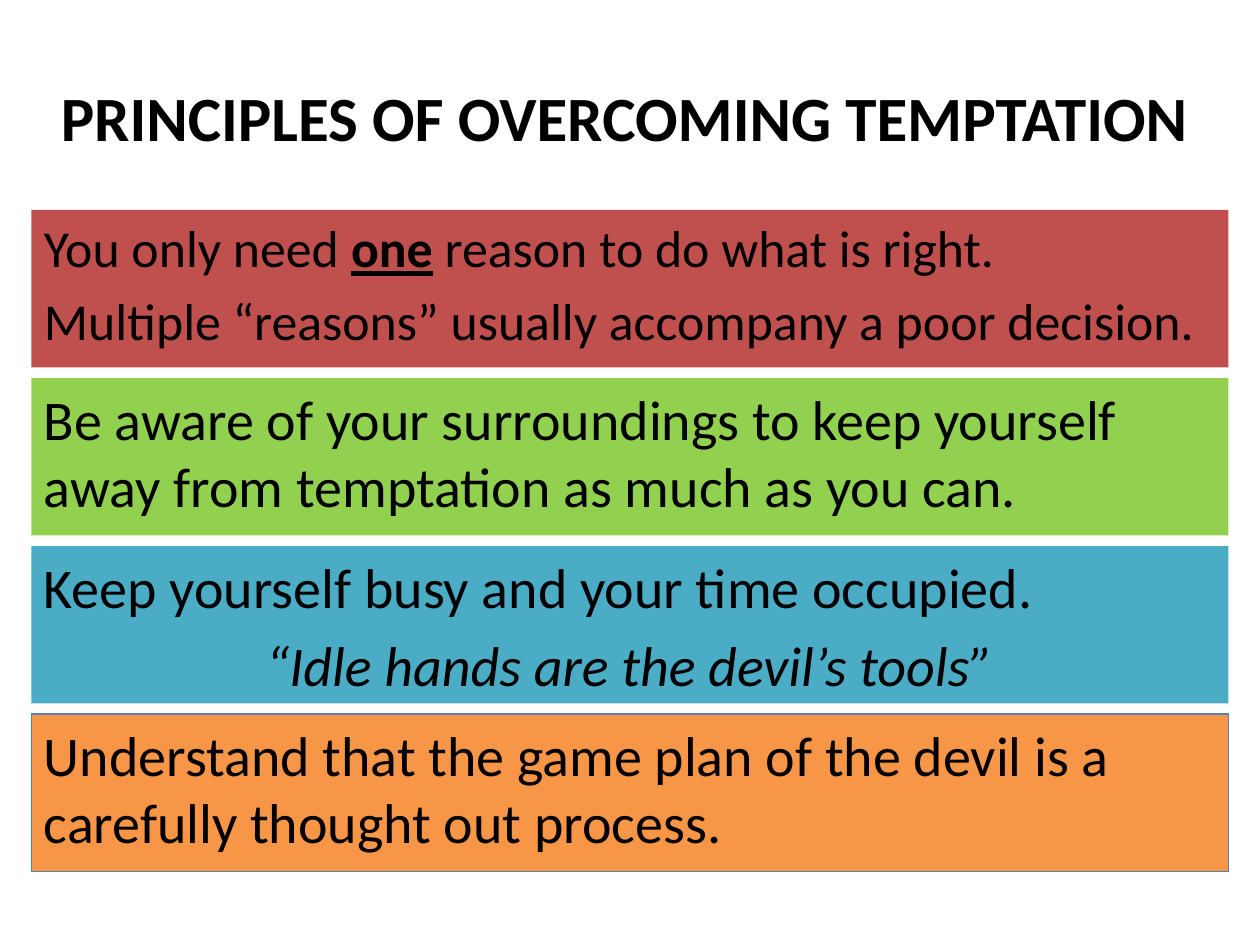
from dataclasses import dataclass

from pptx import Presentation
from pptx import util as u
from pptx.dml.color import RGBColor
from pptx.enum import shapes, text


@dataclass(frozen=True)
class Theme:
    font: str = "Calibri"
    ink: str = "000000"
    red: str = "C0504D"
    green: str = "92D050"
    teal: str = "4BACC6"
    orange: str = "F79646"
    outline: str = "4F81BD"
    title_size: float = 36
    body_size: float = 32
    small_size: float = 29.6


T = Theme()
LEFT, CENTER = text.PP_ALIGN.LEFT, text.PP_ALIGN.CENTER


def style(p, size, align):
    p.alignment = align
    p.font.name = T.font
    p.font.size = u.Pt(size)
    p.font.color.rgb = RGBColor.from_string(T.ink)


prs = Presentation()
prs.slide_width, prs.slide_height = u.Inches(10), u.Inches(7.5)
s = prs.slides.add_slide(prs.slide_layouts[6])

# Title
tf = s.shapes.add_textbox(u.Inches(0.33), u.Inches(0.3), u.Inches(9.25), u.Inches(1.25)).text_frame
tf.word_wrap = True
tf.vertical_anchor = text.MSO_ANCHOR.MIDDLE
p = tf.paragraphs[0]
p.text = "PRINCIPLES OF OVERCOMING TEMPTATION"
style(p, T.title_size, CENTER)
p.font.bold = True

# Principles: fill, outline, text size, paragraphs of (alignment, runs of (text, emphasis))
principles = [
    (T.red, None, T.small_size, [
        (LEFT, [("You only need ", ""), ("one", "bold underline"),
                (" reason to do what is right.", "")]),
        (LEFT, [("Multiple “reasons” usually accompany a poor decision.", "")])]),
    (T.green, None, T.body_size, [
        (LEFT, [("Be aware of your surroundings to keep yourself "
                 "away from temptation as much as you can.", "")])]),
    (T.teal, None, T.body_size, [
        (LEFT, [("Keep yourself busy and your time occupied.", "")]),
        (CENTER, [("“Idle hands are the devil’s tools”", "italic")])]),
    (T.orange, T.outline, T.body_size, [
        (LEFT, [("Understand that the game plan of the devil is a "
                 "carefully thought out process.", "")])]),
]

# Stacked panels, evenly spaced
for i, (fill, outline, size, paragraphs) in enumerate(principles):
    sp = s.shapes.add_shape(shapes.MSO_SHAPE.RECTANGLE, u.Inches(0.25),
                            u.Inches((5 + 4 * i) / 3), u.Inches(9.5), u.Inches(1.25))
    sp.shadow.inherit = False
    sp.fill.solid()
    sp.fill.fore_color.rgb = RGBColor.from_string(fill)
    if outline:
        sp.line.color.rgb = RGBColor.from_string(outline)
        sp.line.width = u.Pt(0.75)
    else:
        sp.line.fill.background()

    tf = sp.text_frame
    tf.word_wrap = True
    tf.vertical_anchor = text.MSO_ANCHOR.TOP
    for n, (align, runs) in enumerate(paragraphs):
        p = tf.add_paragraph() if n else tf.paragraphs[0]
        style(p, size, align)
        p.space_before = u.Pt(0.2 * size)
        for words, emphasis in runs:
            r = p.add_run()
            r.text = words
            for name in emphasis.split():
                setattr(r.font, name, True)

prs.save("out.pptx")
